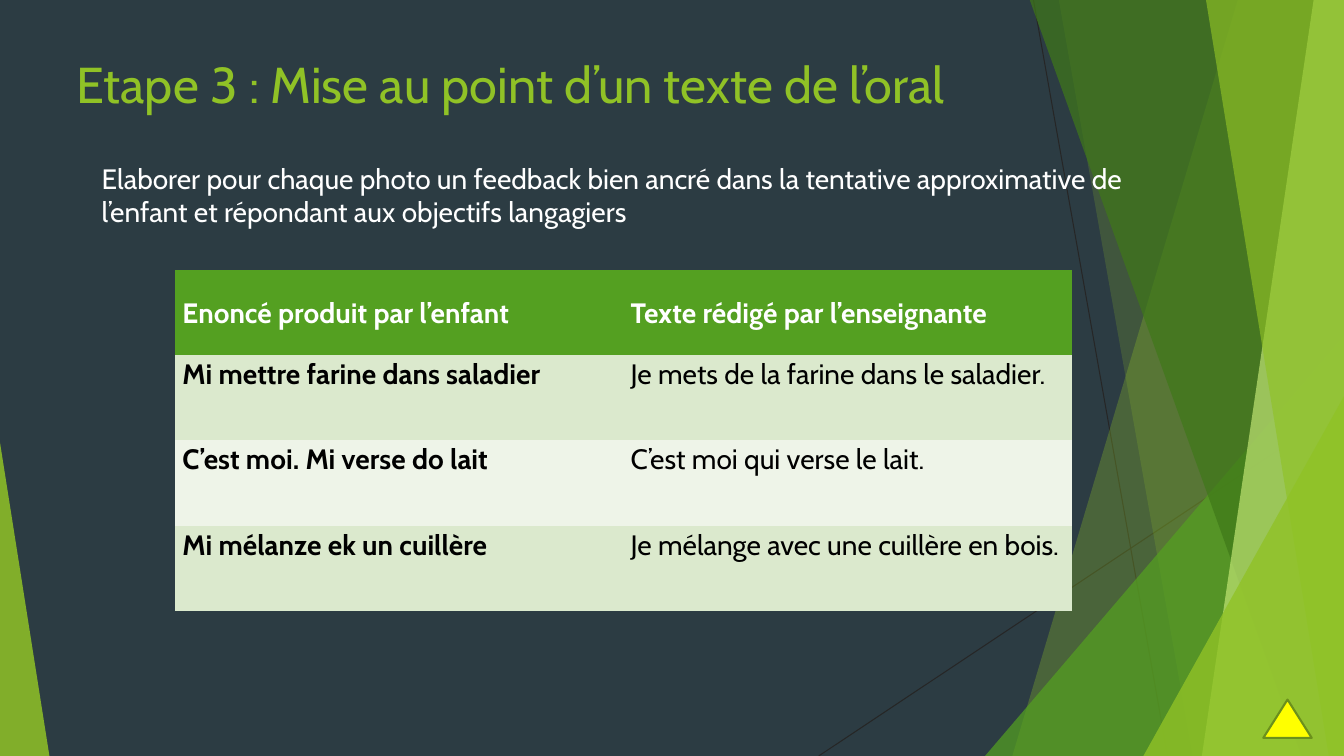
from lxml.etree import SubElement
from pptx import Presentation
from pptx.dml.color import RGBColor
from pptx.enum.shapes import MSO_CONNECTOR, MSO_SHAPE
from pptx.enum.text import MSO_ANCHOR, PP_ALIGN
from pptx.oxml.ns import qn
from pptx.util import Pt

PX = 9144  # 100 px to the inch
WIDE, HIGH = 1333, 750
FONT = "Cabin"
LIME, GREEN, WHITE, BLACK = "90C226", "54A021", "FFFFFF", "000000"
NO_GRID = "{2D5ABB26-0587-4C30-8999-92F81FD0307C}"

ROWS = [
    ("Enoncé produit par l’enfant", "Texte rédigé par l’enseignante"),
    ("Mi mettre farine dans saladier", "Je mets de la farine dans le saladier."),
    ("C’est moi. Mi verse do lait", "C’est moi qui verse le lait."),
    ("Mi mélanze ek un cuillère", "Je mélange avec une cuillère en bois."),
]


def px(*nums):
    return [round(n * PX) for n in nums]


def rgb(code):
    return RGBColor.from_string(code)


def paint(shape, color, alpha=100, line=None):
    """Fill a shape, with opacity in percent and an optional outline."""
    shape.shadow.inherit = False
    shape.fill.solid()
    shape.fill.fore_color.rgb = rgb(color)
    if alpha < 100:
        fill = shape.element.spPr.find(qn("a:solidFill"))
        SubElement(fill[0], qn("a:alpha"), val=str(alpha * 1000))
    if line:
        shape.line.color.rgb = rgb(line)
        shape.line.width = Pt(1.5)
    else:
        shape.line.fill.background()


def write(frame, text, size=20, color=WHITE, bold=False, space=1.0):
    frame.word_wrap = True
    par = frame.paragraphs[0]
    par.alignment = PP_ALIGN.LEFT
    par.line_spacing = space
    run = par.add_run()
    run.text = text
    font = run.font
    font.name, font.size, font.bold = FONT, Pt(size), bold
    font.color.rgb = rgb(color)


def rule(shapes, *ends):
    line = shapes.add_connector(MSO_CONNECTOR.STRAIGHT, *px(*ends))
    line.line.color.rgb = rgb("262626")
    line.line.width = Pt(0.75)
    SubElement(line.element.spPr, qn("a:effectLst"))


def band(shapes, top, foot, color, alpha):
    """Band from a slanted left edge to the right side of the slide."""
    pen = shapes.build_freeform(top, -1, scale=PX)
    pen.add_line_segments([(WIDE, -1), (WIDE, HIGH), (foot, HIGH)], close=True)
    paint(pen.convert_to_shape(), color, alpha)


def wedge(shapes, box, tip, color, alpha):
    """Right triangle with its tip at the left (0) or right (1)."""
    shape = shapes.add_shape(MSO_SHAPE.ISOSCELES_TRIANGLE, *px(*box))
    shape.adjustments[0] = tip
    paint(shape, color, alpha)


def decor(shapes):
    rule(shapes, 1025, 0, 1158, HIGH)
    rule(shapes, WIDE, 403, 812, HIGH)
    band(shapes, 1228, 1004, LIME, 30)
    band(shapes, 1050, 1183, LIME, 20)
    wedge(shapes, (977, 333, 356, 417), 1, GREEN, 72)
    band(shapes, 1021, 1291, "3F7819", 70)
    band(shapes, 1303, 1192, "C0E474", 70)
    band(shapes, 1196, 1318, LIME, 65)
    wedge(shapes, (1134, 393, 199, 357), 1, LIME, 80)
    wedge(shapes, (0, 439, 49, 311), 0, LIME, 85)


def head(shapes, box, text):
    title = shapes.title
    shapes.element.append(title.element)  # in front of the decor
    title.left, title.top, title.width, title.height = px(*box)
    write(title.text_frame, text, size=36, color=LIME)
    title.text_frame.vertical_anchor = MSO_ANCHOR.TOP


def note(shapes, box, text):
    write(shapes.add_textbox(*px(*box)).text_frame, text)


def grid(shapes, box, rows):
    frame = shapes.add_table(len(rows), len(rows[0]), *px(*box))
    table = frame.table
    table.first_row = table.horz_banding = False
    for style in frame.element.iter(qn("a:tableStyleId")):
        style.text = NO_GRID
    for r, row in enumerate(rows):
        fill = GREEN if r == 0 else ("EEF4E8", "DBE9CD")[r % 2]
        for c, text in enumerate(row):
            cell = table.cell(r, c)
            cell.fill.solid()
            cell.fill.fore_color.rgb = rgb(fill)
            cell.margin_left, cell.margin_right = px(7, 7)
            cell.margin_top = cell.margin_bottom = 0
            cell.vertical_anchor = MSO_ANCHOR.TOP if r else MSO_ANCHOR.MIDDLE
            write(cell.text_frame, text, color=BLACK if r else WHITE,
                  bold=r == 0 or c == 0, space=1.07)


def mark(shapes, box):
    shape = shapes.add_shape(MSO_SHAPE.FLOWCHART_EXTRACT, *px(*box))
    paint(shape, "FFFF00", line="6B901C")


def main():
    deck = Presentation()
    deck.slide_width, deck.slide_height = px(WIDE, HIGH)
    slide = deck.slides.add_slide(deck.slide_layouts[5])
    slide.background.fill.solid()
    slide.background.fill.fore_color.rgb = rgb("2C3C43")
    shapes = slide.shapes
    decor(shapes)
    head(shapes, (66, 48, 1065, 86),
         "Etape 3 : Mise au point d’un texte de l’oral")
    note(shapes, (91, 155, 1089, 178),
         "Elaborer pour chaque photo un feedback bien ancré dans la tentative "
         "approximative de l’enfant et répondant aux objectifs langagiers")
    mark(shapes, (1253, 694, 48, 38))
    grid(shapes, (174, 268, 889, 338), ROWS)
    deck.save("out.pptx")


if __name__ == "__main__":
    main()
